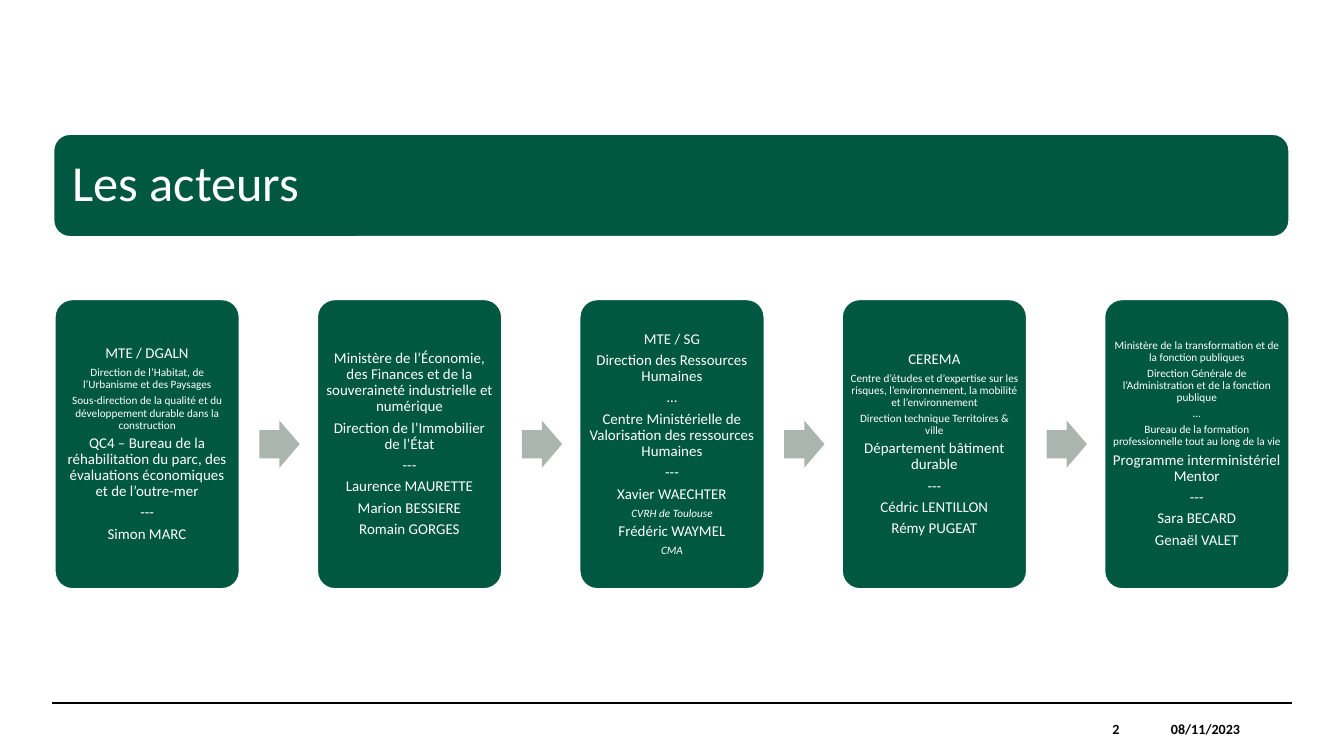
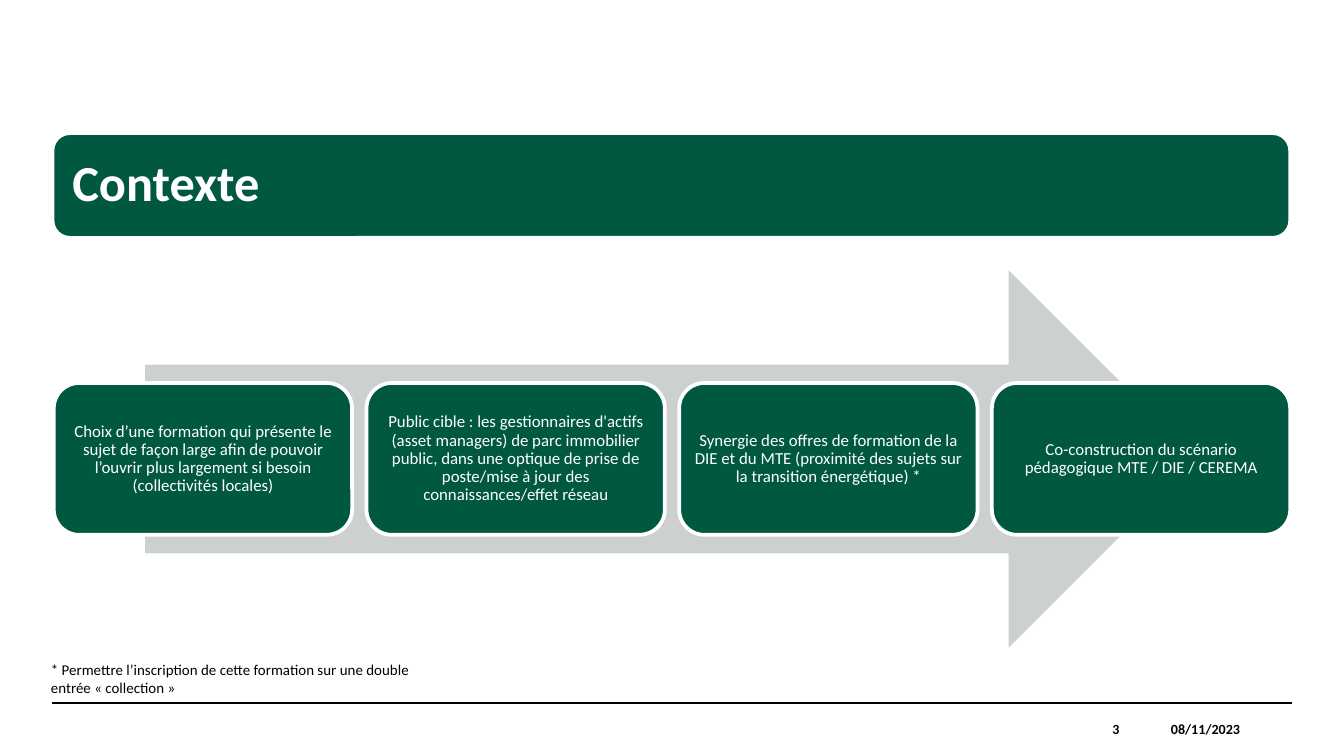
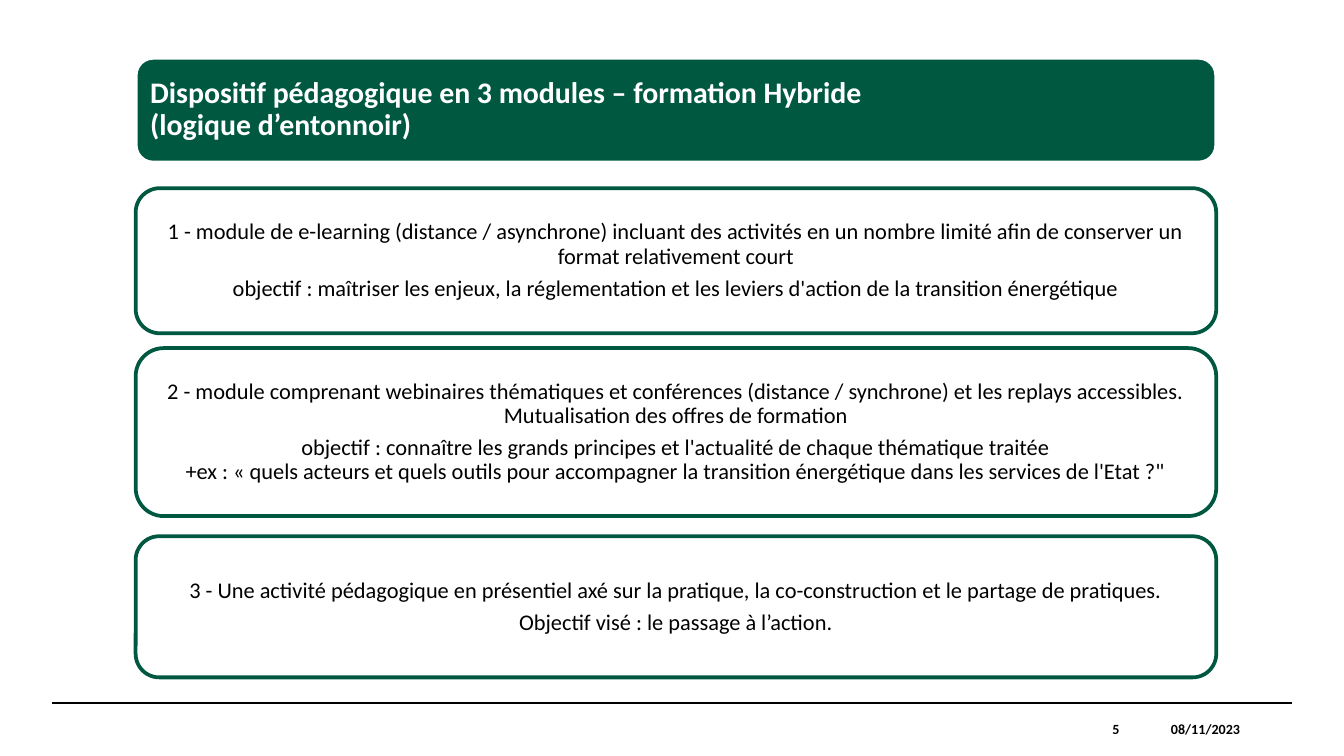
from copy import deepcopy

from pptx import Presentation
from pptx.dml.color import RGBColor
from pptx.enum.shapes import MSO_CONNECTOR, MSO_SHAPE
from pptx.enum.text import MSO_ANCHOR, PP_ALIGN
from pptx.oxml.ns import qn
from pptx.oxml.xmlchemy import OxmlElement
from pptx.util import Inches, Pt

ROUND = MSO_SHAPE.ROUNDED_RECTANGLE
ARROW = MSO_SHAPE.RIGHT_ARROW
LINE = MSO_CONNECTOR.STRAIGHT
TOP, MIDDLE = MSO_ANCHOR.TOP, MSO_ANCHOR.MIDDLE
LEFT, CENTER, RIGHT = PP_ALIGN.LEFT, PP_ALIGN.CENTER, PP_ALIGN.RIGHT

WIDE = Inches(10)
TALL = WIDE * 9 // 16
CELL = WIDE / 100
EDGE, SPAN = 4, 92

GREEN, WHITE, BLACK = "005841", "FFFFFF", "000000"
STEP, PALE = "ABB5B0", "CCD1CF"
FONT = "Calibri"
DATE = "08/11/2023"


def color(code):
    return RGBColor.from_string(code)


def grid(*cells):
    return [round(cell * CELL) for cell in cells]


def spread(count, width):
    pitch = (SPAN - width) / (count - 1)
    return [EDGE + i * pitch for i in range(count)]


class Deck:
    def __init__(self):
        self.show = Presentation()
        self.show.slide_width, self.show.slide_height = WIDE, TALL
        self.slide = None

    def start(self, page):
        self.slide = self.show.slides.add_slide(self.show.slide_layouts[6])
        self.rule(3.9, 52.3, 96.1, 52.3)
        foot = {"size": 7.5, "bold": True, "anchor": MIDDLE, "inset": 0}
        self.label((83.3, 52.3, 12.8, 3.9), DATE, align=CENTER, **foot)
        self.label((68.5, 52.3, 14.8, 3.9), str(page), align=RIGHT, **foot)

    def rule(self, *ends):
        line = self.slide.shapes.add_connector(LINE, *grid(*ends))
        line.line.color.rgb = color(BLACK)
        line.line.width = Pt(0.8)
        line._element.spPr.append(OxmlElement("a:effectLst"))

    def shape(self, kind, area, fill, edge=None, adjust=(), alpha=None):
        shape = self.slide.shapes.add_shape(kind, *grid(*area))
        shape.shadow.inherit = False
        shape.fill.solid()
        shape.fill.fore_color.rgb = color(fill)
        if alpha:
            tone = OxmlElement("a:alpha")
            tone.set("val", str(alpha * 1000))
            shape._element.spPr.find(".//" + qn("a:srgbClr")).append(tone)
        if edge:
            shape.line.color.rgb = color(edge)
            shape.line.width = Pt(2)
        else:
            shape.line.fill.background()
        for i, value in enumerate(adjust):
            shape.adjustments[i] = value
        return shape

    def words(self, shape, items, size, ink=BLACK, align=LEFT, anchor=MIDDLE,
              inset=None, bold=False, tight=False):
        frame = shape.text_frame
        form = {"word_wrap": True, "vertical_anchor": anchor}
        if inset is not None:
            for side in ("left", "top", "right", "bottom"):
                form["margin_" + side] = Inches(inset)
        for name, value in form.items():
            setattr(frame, name, value)
        for i, item in enumerate(items):
            text, points, slant = item if isinstance(item, tuple) else (item, size, False)
            para = frame.add_paragraph() if i else frame.paragraphs[0]
            para.text = text
            para.alignment = align
            if tight:
                para.line_spacing = 0.9
                para.space_after = Pt(0.35 * points)
            style = {"name": FONT, "size": Pt(points), "bold": bold, "italic": slant}
            for run in para.runs:
                for name, value in style.items():
                    setattr(run.font, name, value)
                run.font.color.rgb = color(ink)
            for gap in para._p.findall(qn("a:br")):
                gap.append(deepcopy(para.runs[0]._r.rPr))

    def label(self, area, text, size, **form):
        self.words(self.slide.shapes.add_textbox(*grid(*area)), [text], size, **form)

    def title(self, text, area=(3.9, 9.9, 92.1, 7.8), size=27, inset=0.11, bold=True):
        band = self.shape(ROUND, area, GREEN, WHITE)
        self.words(band, [text], size, WHITE, inset=inset, bold=bold, tight=True)

    def card(self, area, items, size, inset, adjust=()):
        card = self.shape(ROUND, area, GREEN, WHITE, adjust)
        self.words(card, items, size, WHITE, CENTER, inset=inset, tight=True)

    def panel(self, area, items):
        panel = self.shape(ROUND, area, WHITE, GREEN, alpha=90)
        self.words(panel, items, 12, align=CENTER, inset=0.04, tight=True)


def small(text, slant=False):
    return text, 6, slant


ACTORS = [
    ["MTE / DGALN",
     small("Direction de l’Habitat, de l’Urbanisme et des Paysages"),
     small("Sous-direction de la qualité et du développement durable dans la construction"),
     "QC4 – Bureau de la réhabilitation du parc, des évaluations économiques et de l’outre-mer",
     "---", "Simon MARC"],
    ["Ministère de l’Économie, des Finances et de la souveraineté industrielle et numérique",
     "Direction de l’Immobilier de l’État",
     "---", "Laurence MAURETTE", "Marion BESSIERE", "Romain GORGES"],
    ["MTE / SG", "Direction des Ressources Humaines", "…",
     "Centre Ministérielle de Valorisation des ressources Humaines",
     "---", "Xavier WAECHTER", small("CVRH de Toulouse", True),
     "Frédéric WAYMEL", small("CMA", True)],
    ["CEREMA",
     small("Centre d’études et d’expertise sur les risques, l’environnement, "
           "la mobilité et l’environnement"),
     small("Direction technique Territoires & ville"),
     "Département bâtiment durable",
     "---", "Cédric LENTILLON", "Rémy PUGEAT"],
    [small("Ministère de la transformation et de la fonction publiques"),
     small("Direction Générale de l’Administration et de la fonction publique"),
     small("…"),
     small("Bureau de la formation professionnelle tout au long de la vie"),
     "Programme interministériel Mentor",
     "---", "Sara BECARD", "Genaël VALET"],
]

STAGES = [
    "Choix d’une formation qui présente le sujet de façon large afin de pouvoir "
    "l’ouvrir plus largement si besoin (collectivités locales)",
    "Public cible : les gestionnaires d'actifs (asset managers) de parc immobilier public, "
    "dans une optique de prise de poste/mise à jour des connaissances/effet réseau",
    "Synergie des offres de formation de la DIE et du MTE "
    "(proximité des sujets sur la transition énergétique) *",
    "Co-construction du scénario pédagogique MTE / DIE / CEREMA",
]

MODULES = [
    (14, 10.8, [
        "1 - module de e-learning (distance / asynchrone) incluant des activités "
        "en un nombre limité afin de conserver un format relativement court",
        "objectif : maîtriser les enjeux, la réglementation et les leviers d'action "
        "de la transition énergétique"]),
    (25.9, 12.5, [
        "2 - module comprenant webinaires thématiques et conférences (distance / synchrone) "
        "et les replays accessibles. Mutualisation des offres de formation",
        "objectif : connaître les grands principes et l'actualité de chaque thématique traitée\n"
        "+ex : « quels acteurs et quels outils pour accompagner la transition énergétique "
        "dans les services de l'Etat ?\""]),
    (39.9, 10.5, [
        "3 - Une activité pédagogique en présentiel axé sur la pratique, "
        "la co-construction et le partage de pratiques.",
        "Objectif visé : le passage à l’action."]),
]


def actors(deck):
    deck.start(2)
    deck.title("Les acteurs", bold=False)
    lefts = spread(len(ACTORS), 13.9)
    for left, items in zip(lefts, ACTORS):
        deck.card((left, 22.2, 13.9, 21.7), items, 8, 0.03, [0.1])
    for left in lefts[:-1]:
        deck.shape(ARROW, (left + 15.3, 31.3, 3, 3.5), STEP, adjust=[0.6, 0.5])


def context(deck):
    deck.start(3)
    deck.title("Contexte")
    deck.label((2.8, 48.7, 29.1, 3.7),
               "* Permettre l’inscription de cette formation sur une double entrée « collection »",
               8, anchor=TOP)
    deck.shape(ARROW, (10.8, 20.1, 78.3, 28.1), PALE)
    for left, text in zip(spread(len(STAGES), 22.2), STAGES):
        deck.card((left, 28.5, 22.2, 11.3), [text], 9, 0.04)


def modules(deck):
    deck.start(5)
    deck.title("Dispositif pédagogique en 3 modules – formation Hybride\n(logique d’entonnoir)",
               (10.1, 4.3, 80.4, 7.8), 16, 0.07)
    for top, height, items in MODULES:
        deck.panel((10.1, top, 80.4, height), items)


def main():
    deck = Deck()
    for build in (actors, context, modules):
        build(deck)
    deck.show.save("out.pptx")


if __name__ == "__main__":
    main()
